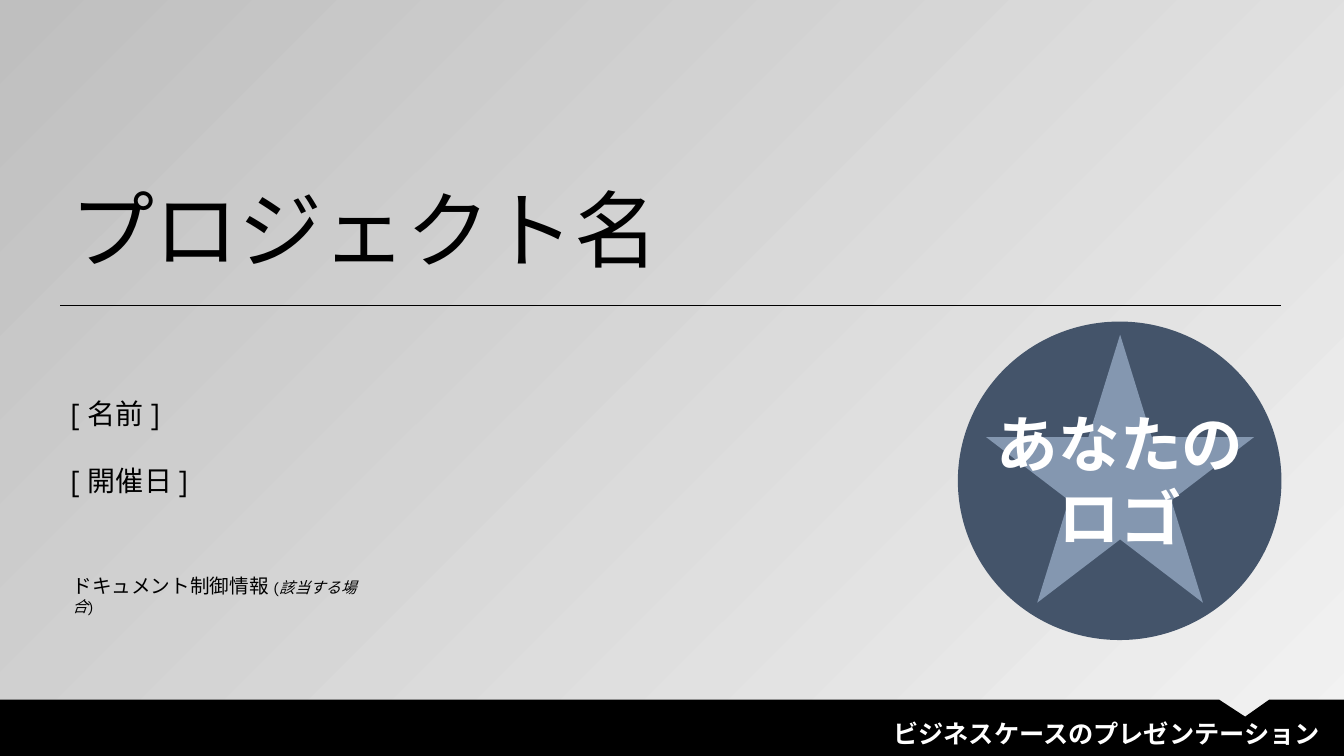
"""Builds the cover slide of a business case deck."""
from pptx import Presentation
from pptx.dml.color import RGBColor
from pptx.enum.shapes import MSO_CONNECTOR as Link, MSO_SHAPE as Shape
from pptx.enum.text import MSO_ANCHOR as Anchor, MSO_AUTO_SIZE as Auto, PP_ALIGN as Align
from pptx.oxml.ns import qn
from pptx.util import Inches, Pt


def tint(code):
    """Turns a hex string into a colour."""
    return RGBColor.from_string(code)


def write(para, text, size=20, color="000000", bold=False, italic=False, align=Align.LEFT, gap=0):
    """Adds a formatted run to a paragraph."""
    para.alignment = align
    para.space_before = Pt(gap)
    run = para.add_run()
    run.text = text
    font = run.font
    font.name = "TeX Gyre Adventor"
    font.size = Pt(size)
    font.bold = bold
    font.italic = italic
    font.color.rgb = tint(color)


deck = Presentation()
deck.slide_width = Inches(13.33)
deck.slide_height = Inches(7.5)
slide = deck.slides.add_slide(deck.slide_layouts[5])
shapes = slide.shapes

back = slide.background.fill
back.gradient()
back.gradient_angle = 135
for stop, code in zip(back.gradient_stops, ["F2F2F2", "BFBFBF"]):
    stop.color.rgb = tint(code)

pen = shapes.build_freeform(0, Inches(6.94), scale=1.0)
edge = [(12.09, 6.94), (12.35, 7.11), (12.59, 6.94), (13.33, 6.94), (13.33, 7.5), (0, 7.5)]
pen.add_line_segments([(Inches(x), Inches(y)) for x, y in edge], close=True)
band = pen.convert_to_shape()

rule = shapes.add_connector(Link.STRAIGHT, Inches(0.6), Inches(3.03), Inches(12.71), Inches(3.03))
rule.line.color.rgb = tint("000000")
rule.line.width = Pt(0.5)
props = rule._element.spPr
props.append(props.makeelement(qn("a:effectLst"), {}))

badge = shapes.add_group_shape()
disc = badge.shapes.add_shape(Shape.OVAL, Inches(9.5), Inches(3.19), Inches(3.21), Inches(3.16))
star = badge.shapes.add_shape(
    Shape.STAR_5_POINT, Inches(9.78), Inches(3.32), Inches(2.66), Inches(2.66))
for item, code in [(band, "000000"), (disc, "44546A"), (star, "8497B0")]:
    item.shadow.inherit = False
    item.fill.solid()
    item.fill.fore_color.rgb = tint(code)
    item.line.fill.background()

title = shapes.title
title.left, title.top = Inches(0.6), Inches(1.71)
title.width, title.height = Inches(12.27), Inches(1.11)
footer = shapes.add_textbox(Inches(6.41), Inches(7.08), Inches(6.78), Inches(0.4))
event = shapes.add_textbox(Inches(0.6), Inches(3.88), Inches(8.59), Inches(1.11))
label = badge.shapes.add_textbox(Inches(9.78), Inches(3.98), Inches(2.66), Inches(1.58))
note = shapes.add_textbox(Inches(0.62), Inches(5.64), Inches(3.21), Inches(0.52))
for box in [title, footer, event, label, note]:
    frame = box.text_frame
    frame.word_wrap = True
    frame.auto_size = Auto.NONE
    frame.vertical_anchor = Anchor.TOP

write(title.text_frame.paragraphs[0], "プロジェクト名", size=60)
write(footer.text_frame.paragraphs[0], "ビジネスケースのプレゼンテーション",
      size=18, color="FFFFFF", bold=True, align=Align.RIGHT)
write(event.text_frame.paragraphs[0], "[ 名前 ]")
write(event.text_frame.add_paragraph(), "[ 開催日 ]", gap=24)
logo = {"size": 44, "color": "FFFFFF", "bold": True, "align": Align.CENTER}
write(label.text_frame.paragraphs[0], "あなたの", **logo)
write(label.text_frame.add_paragraph(), "ロゴ", **logo)
info = note.text_frame.paragraphs[0]
write(info, "ドキュメント制御情報 ", size=14)
write(info, "(該当する場合)", size=11, italic=True)

deck.save("out.pptx")
